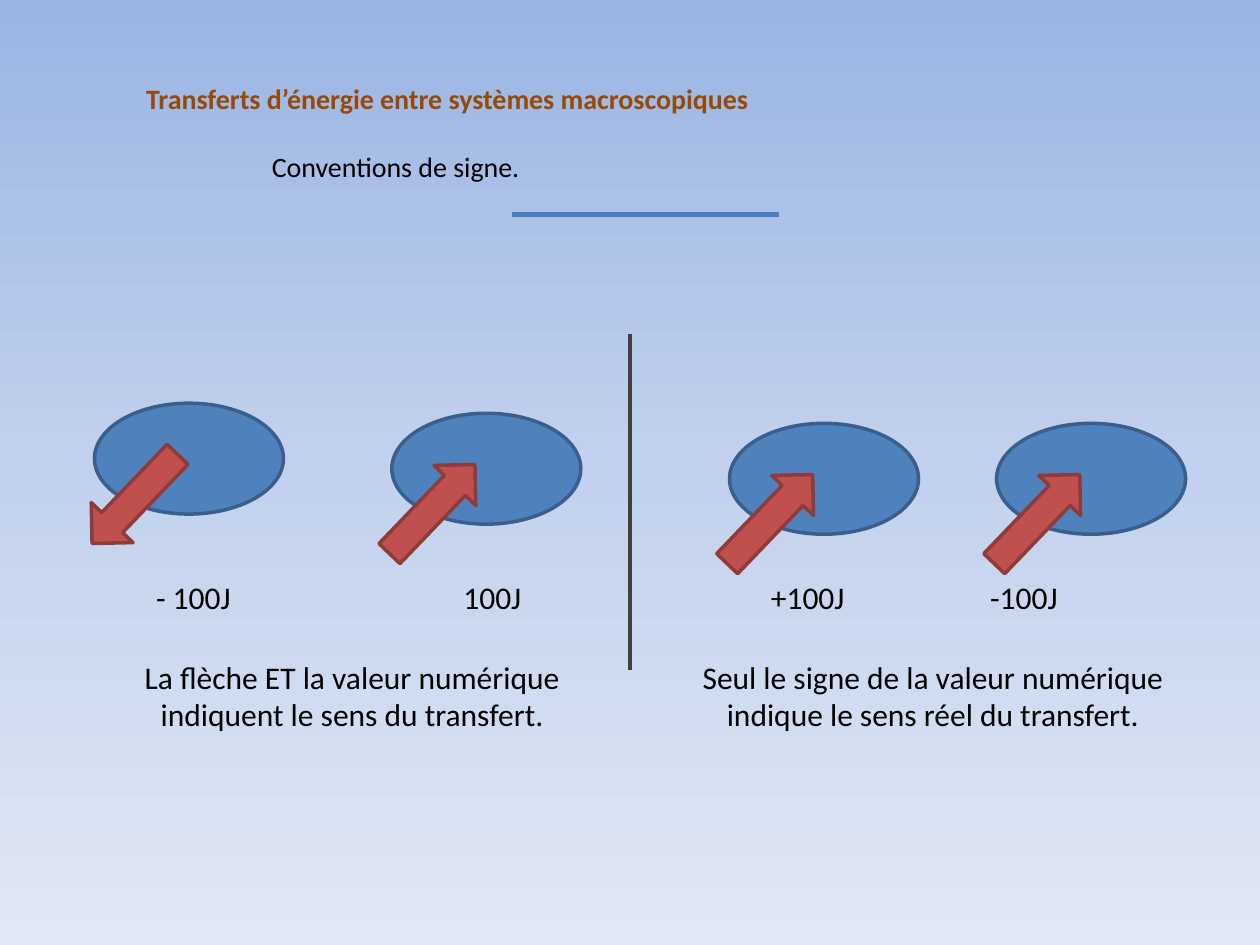
from copy import deepcopy
from dataclasses import dataclass

from lxml.etree import SubElement
from pptx import Presentation
from pptx.dml.color import RGBColor
from pptx.enum.shapes import MSO_CONNECTOR, MSO_SHAPE
from pptx.enum.text import MSO_ANCHOR, MSO_AUTO_SIZE, PP_ALIGN
from pptx.oxml.ns import qn
from pptx.util import Inches, Pt


@dataclass(frozen=True)
class Theme:
    font: str = "Calibri"
    heading_size: int = 16
    body_size: int = 18
    heading: str = "984807"
    text: str = "000000"
    system: str = "4F81BD"
    system_edge: str = "3A5F8C"
    transfer: str = "C0504D"
    transfer_edge: str = "8E3B39"
    rule: str = "4B7EBC"
    divider: str = "404040"
    background: tuple = ((0, "9AB5E4"), (0.5, "C2D1ED"), (1, "E1E8F5"))


class SlideBuilder:
    def __init__(self, slide, theme):
        self.slide = slide
        self.theme = theme

    def background(self):
        fill = self.slide.background.fill
        fill.gradient()
        fill.gradient_angle = 270  # top to bottom
        stop_list = self.slide.element.find(".//" + qn("a:gsLst"))
        stop_list.insert(1, deepcopy(stop_list[0]))
        for stop, (position, color) in zip(fill.gradient_stops, self.theme.background):
            stop.position = position
            stop.color.rgb = RGBColor.from_string(color)

    def set_text(self, box, text, size, color, bold=False, align=PP_ALIGN.LEFT):
        frame = box.text_frame
        frame.text = text
        frame.word_wrap = True
        frame.auto_size = MSO_AUTO_SIZE.NONE
        frame.vertical_anchor = MSO_ANCHOR.TOP
        paragraph = frame.paragraphs[0]
        paragraph.alignment = align
        font = paragraph.font
        font.name, font.size, font.bold = self.theme.font, Pt(size), bold
        font.color.rgb = RGBColor.from_string(color)

    def title(self, text, left, top, width, height):
        heading = self.slide.shapes.title
        heading.left, heading.top = Inches(left), Inches(top)
        heading.width, heading.height = Inches(width), Inches(height)
        self.set_text(heading, text, self.theme.heading_size, self.theme.heading, bold=True)

    def text(self, text, left, top, width, height, size=None, align=PP_ALIGN.LEFT):
        box = self.slide.shapes.add_textbox(
            Inches(left), Inches(top), Inches(width), Inches(height))
        self.set_text(box, text, size or self.theme.body_size, self.theme.text, align=align)

    def line(self, start, end, color, weight):
        rule = self.slide.shapes.add_connector(
            MSO_CONNECTOR.STRAIGHT, *map(Inches, start + end))
        rule.line.color.rgb = RGBColor.from_string(color)
        rule.line.width = Pt(weight)
        SubElement(rule.element.spPr, qn("a:effectLst"))

    def shape(self, kind, left, top, width, height, fill, edge, rotation=0):
        figure = self.slide.shapes.add_shape(
            kind, Inches(left), Inches(top), Inches(width), Inches(height))
        figure.shadow.inherit = False
        figure.fill.solid()
        figure.fill.fore_color.rgb = RGBColor.from_string(fill)
        figure.line.color.rgb = RGBColor.from_string(edge)
        figure.line.width = Pt(2)
        figure.rotation = rotation

    def energy_transfer(self, left, top, rotation):
        """A system with the arrow of energy leaving or entering it."""
        theme = self.theme
        self.shape(MSO_SHAPE.OVAL, left, top, 1.5, 0.88,
                   theme.system, theme.system_edge)
        self.shape(MSO_SHAPE.DOWN_ARROW, left + 0.09, top + 0.27, 0.46, 0.98,
                   theme.transfer, theme.transfer_edge, rotation)


def main():
    theme = Theme()
    deck = Presentation()
    deck.slide_width, deck.slide_height = Inches(10), Inches(7.5)
    page = SlideBuilder(deck.slides.add_slide(deck.slide_layouts[5]), theme)
    page.background()

    # Heading
    page.title("Transferts d’énergie entre systèmes macroscopiques", 1.06, 0.6, 7.87, 0.4)
    page.text("Conventions de signe.", 2.06, 1.14, 6.87, 0.37, theme.heading_size)
    page.line((4.06, 1.7), (6.18, 1.7), theme.rule, 3)

    # Divider between the two conventions
    page.line((5, 2.65), (5, 5.32), theme.divider, 2.25)

    # Systems, each with its arrow and its value
    outward = 43.8
    inward = outward + 180
    transfers = [
        (0.75, 3.2, outward, "- 100J", 1.14),
        (3.11, 3.28, inward, "100J", 3.58),
        (5.79, 3.36, inward, "+100J", 6.02),
        (7.91, 3.36, inward, "-100J", 7.76),
    ]
    for left, top, rotation, value, value_left in transfers:
        page.energy_transfer(left, top, rotation)
        page.text(value, value_left, 4.54, 0.87, 0.4)

    # What each convention means
    conventions = [
        ("La flèche ET la valeur numérique indiquent le sens du transfert.", 0.67, 4.25),
        ("Seul le signe de la valeur numérique indique le sens réel du transfert.", 5.08, 4.65),
    ]
    for meaning, left, width in conventions:
        page.text(meaning, left, 5.17, width, 0.71, align=PP_ALIGN.CENTER)

    deck.save("out.pptx")


if __name__ == "__main__":
    main()
